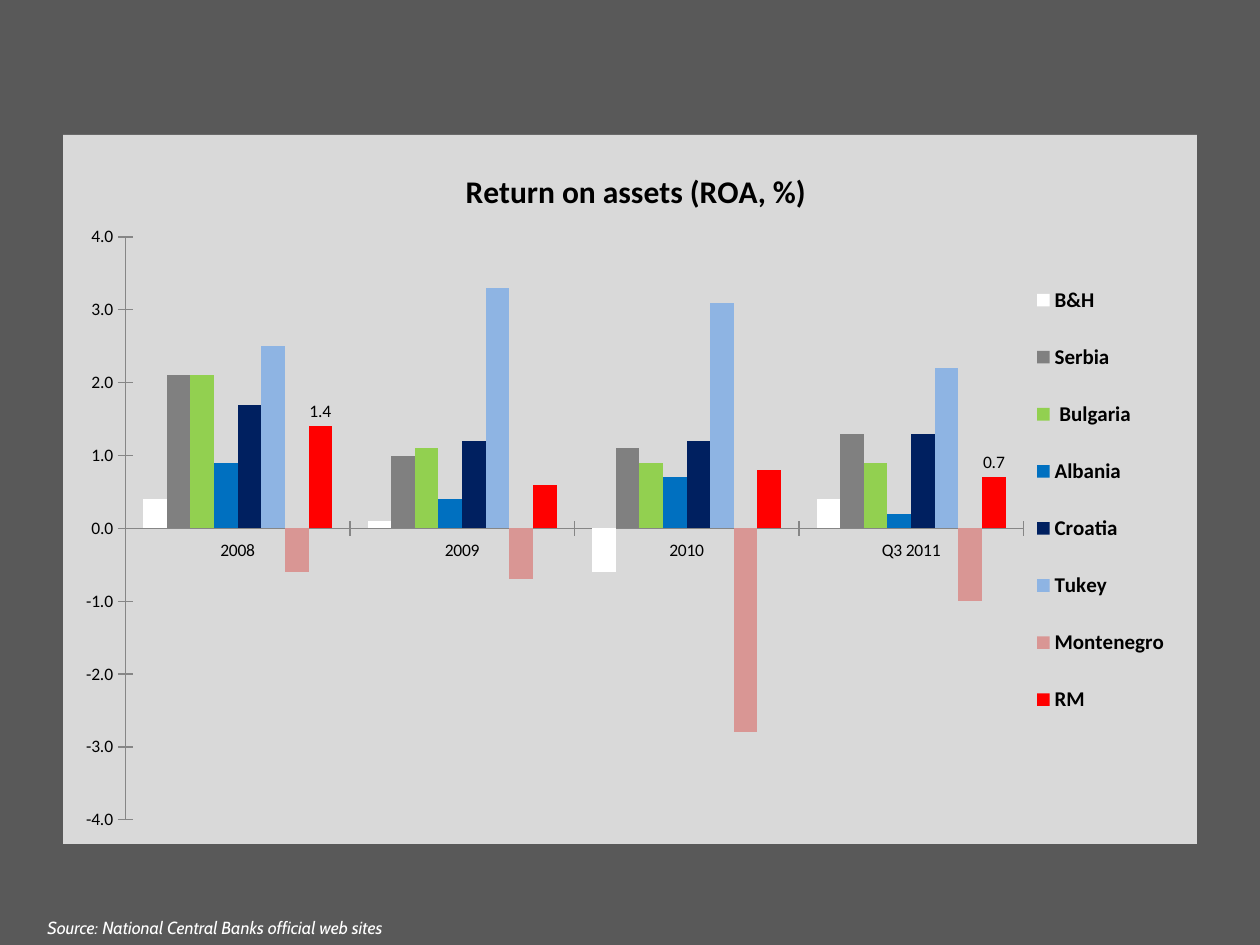
from pptx import Presentation
from pptx.chart.data import CategoryChartData
from pptx.dml.color import RGBColor
from pptx.enum.chart import XL_CHART_TYPE, XL_LABEL_POSITION, XL_LEGEND_POSITION, XL_TICK_MARK
from pptx.oxml import parse_xml
from pptx.oxml.ns import nsdecls, qn
from pptx.util import Pt

EMU_PER_PX = 914400 / 126
COLUMNS = XL_CHART_TYPE.COLUMN_CLUSTERED
LABEL_ABOVE = XL_LABEL_POSITION.OUTSIDE_END
LEGEND_RIGHT = XL_LEGEND_POSITION.RIGHT
TICK_CROSS = XL_TICK_MARK.CROSS

COLORS = {
    "background": "595959", "panel": "D9D9D9", "axis": "868686",
    "text": "000000", "source": "FFFFFF",
    "B&H": "FFFFFF", "Serbia": "808080", " Bulgaria": "92D050",
    "Albania": "0070C0", "Croatia": "002060", "Tukey": "8EB4E3",
    "Montenegro": "D99694", "RM": "FF0000",
}
YEARS = ["2008", "2009", "2010", "Q3 2011"]
ROA = {
    "B&H": (0.4, 0.1, -0.6, 0.4),
    "Serbia": (2.1, 1, 1.1, 1.3),
    " Bulgaria": (2.1, 1.1, 0.9, 0.9),
    "Albania": (0.9, 0.4, 0.7, 0.2),
    "Croatia": (1.7, 1.2, 1.2, 1.3),
    "Tukey": (2.5, 3.3, 3.1, 2.2),
    "Montenegro": (-0.6, -0.7, -2.8, -1),
    "RM": (1.4, 0.6, 0.8, 0.7),
}
LABELLED_POINTS = (0, 3)


def px(n):
    return round(n * EMU_PER_PX)


def rgb(name):
    return RGBColor.from_string(COLORS[name])


def set_attrs(obj, **values):
    for key, value in values.items():
        setattr(obj, key, value)


def set_font(font, size, color="text", name="Calibri", bold=False, italic=False):
    set_attrs(font, size=Pt(size), name=name, bold=bold, italic=italic)
    font.color.rgb = rgb(color)


def set_layout(element, index, inner=False, **fractions):
    """Place a chart part by fractions of the chart area."""
    for old in element.findall(qn("c:layout")):
        element.remove(old)
    target = '<c:layoutTarget val="inner"/>' if inner else ""
    modes = "".join(f'<c:{k}Mode val="edge"/>' for k in fractions if k in "xy")
    values = "".join(f'<c:{k} val="{v}"/>' for k, v in fractions.items())
    element.insert(index, parse_xml(
        f'<c:layout {nsdecls("c")}><c:manualLayout>{target}{modes}{values}'
        "</c:manualLayout></c:layout>"))


def panel_fill():
    return parse_xml(
        f'<c:spPr {nsdecls("c", "a")}><a:solidFill><a:srgbClr val="{COLORS["panel"]}"/>'
        "</a:solidFill><a:ln><a:noFill/></a:ln></c:spPr>")


def style_axis(axis):
    set_attrs(axis, has_major_gridlines=False, major_tick_mark=TICK_CROSS)
    axis.format.line.color.rgb = rgb("axis")
    set_font(axis.tick_labels.font, 10)


def style_series(plot):
    set_attrs(plot, gap_width=150, overlap=0, vary_by_categories=False)
    for series in plot.series:
        series.invert_if_negative = False
        series.format.fill.solid()
        series.format.fill.fore_color.rgb = rgb(series.name)
    # Only the first and last bars of the last series carry a value
    for i in LABELLED_POINTS:
        label = series.points[i].data_label
        set_font(label.font, 10)
        label.position = LABEL_ABOVE
    series.data_labels.show_value = False


def add_roa_chart(slide, x, y, w, h):
    data = CategoryChartData(number_format="0.0")
    data.categories = YEARS
    for name, values in ROA.items():
        data.add_series(name, values)
    chart = slide.shapes.add_chart(COLUMNS, px(x), px(y), px(w), px(h), data).chart
    set_font(chart.font, 10)

    # Title
    chart.has_title = True
    title = chart.chart_title
    title.text_frame.text = "Return on assets (ROA, %)"
    set_font(title.text_frame.paragraphs[0].runs[0].font, 18, bold=True)
    title.include_in_layout = True
    set_layout(title._element, 1, x=0.35, y=0.04)

    # Axes and columns
    for axis in (chart.category_axis, chart.value_axis):
        style_axis(axis)
    set_attrs(chart.value_axis, minimum_scale=-4, maximum_scale=4, major_unit=1)
    set_attrs(chart.value_axis.tick_labels, number_format="0.0",
              number_format_is_linked=False)
    style_series(chart.plots[0])

    # Legend
    chart.has_legend = True
    set_attrs(chart.legend, position=LEGEND_RIGHT, include_in_layout=False)
    set_font(chart.legend.font, 12, bold=True)
    set_layout(chart.legend._element, 1, x=0.85, y=0.17, w=0.13, h=0.69)

    # Panel behind the chart and the plot
    chart_element = chart._chartSpace.find(qn("c:chart"))
    plot_area = chart_element.find(qn("c:plotArea"))
    set_layout(plot_area, 0, inner=True, x=0.055, y=0.144, w=0.792, h=0.822)
    plot_area.append(panel_fill())
    chart_element.addnext(panel_fill())


def add_source(slide, x, y, w, h, text):
    tf = slide.shapes.add_textbox(px(x), px(y), px(w), px(h)).text_frame
    tf.word_wrap = True
    r = tf.paragraphs[0].add_run()
    r.text = text
    set_font(r.font, 10, "source", "Cabin", italic=True)


def main():
    prs = Presentation()
    set_attrs(prs, slide_width=px(1260), slide_height=px(945))
    slide = prs.slides.add_slide(prs.slide_layouts[6])
    fill = slide.background.fill
    fill.solid()
    fill.fore_color.rgb = rgb("background")
    add_roa_chart(slide, 63, 135, 1134, 709)
    add_source(slide, 35, 911, 456, 34,
               "Source: National Central Banks official web sites")
    prs.save("out.pptx")


if __name__ == "__main__":
    main()
